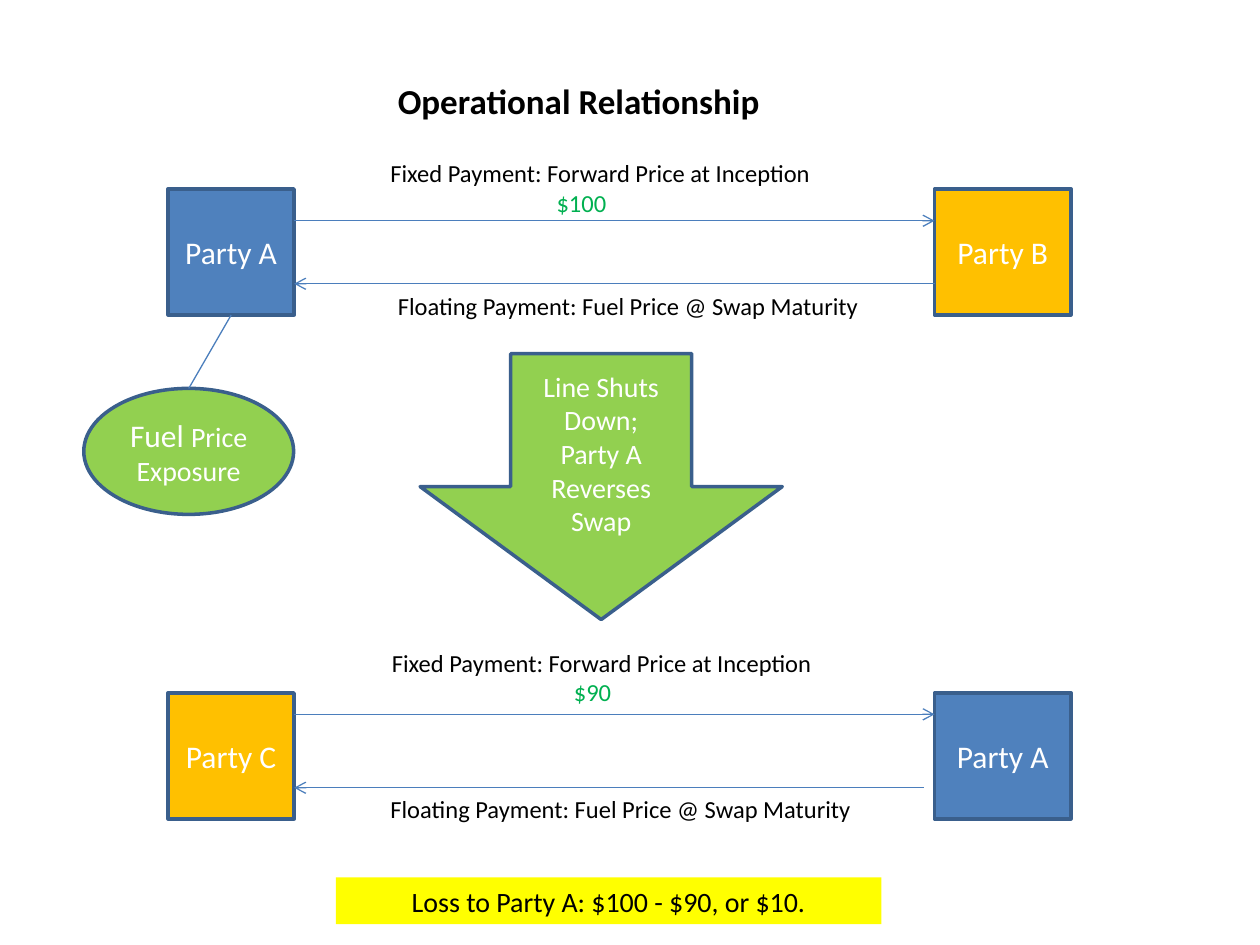
from lxml.etree import SubElement as Sub
from pptx import Presentation
from pptx.dml.color import RGBColor as RGB
from pptx.enum.shapes import MSO_CONNECTOR as Conn, MSO_SHAPE as Geo
from pptx.enum.text import MSO_ANCHOR as Anchor, PP_ALIGN as Align
from pptx.oxml.ns import qn
from pptx.util import Cm, Pt

BLUE, GOLD, LIME, EDGE = "4F81BD", "FFC000", "92D050", "3A5F8C"
WHITE, BLACK, GREEN = "FFFFFF", "000000", "00B050"


def color(fmt, code):
    if hasattr(fmt, "solid"):
        fmt.solid()
        fmt = fmt.fore_color
    fmt.rgb = RGB.from_string(code)


def write(frame, paras, align):
    """Each paragraph is a list of (text, size, color, bold) runs."""
    frame.word_wrap = True
    for i, runs in enumerate(paras):
        para = frame.paragraphs[0] if i == 0 else frame.add_paragraph()
        para.alignment = align
        for text, size, code, bold in runs:
            run = para.add_run()
            run.text = text
            look = {"name": "Calibri", "size": Pt(size), "bold": bold}
            for key, val in look.items():
                setattr(run.font, key, val)
            color(run.font.color, code)


deck = Presentation()
deck.slide_width, deck.slide_height = Cm(25.4), Cm(19.05)
slide = deck.slides.add_slide(deck.slide_layouts[6])
shapes = slide.shapes

# Filled shapes: parties, exposure, reversal and loss
boxes = {
    "A top": (Geo.RECTANGLE, 3.39, 3.81, 2.54, 2.54, BLUE,
              [[("Party A", 18, WHITE, False)]]),
    "B": (Geo.RECTANGLE, 18.84, 3.81, 2.75, 2.54, GOLD,
          [[("Party B", 18, WHITE, False)]]),
    "C": (Geo.RECTANGLE, 3.39, 13.97, 2.54, 2.54, GOLD,
          [[("Party C", 18, WHITE, False)]]),
    "A low": (Geo.RECTANGLE, 18.84, 13.97, 2.75, 2.54, BLUE,
              [[("Party A", 18, WHITE, False)]]),
    "fuel": (Geo.OVAL, 1.69, 7.83, 4.23, 2.54, LIME,
             [[("Fuel ", 18, WHITE, False),
               ("Price Exposure", 16, WHITE, False)]]),
    "swap": (Geo.DOWN_ARROW, 8.47, 7.13, 7.3, 5.36, LIME,
             [[("Line Shuts Down;", 16, WHITE, False)],
              [("Party A Reverses Swap", 16, WHITE, False)]]),
    "loss": (Geo.RECTANGLE, 6.77, 17.69, 11, 0.94, "FFFF00",
             [[("Loss to Party A: $100 - $90, or $10.", 16, BLACK, False)]]),
}
made = {}
for name, (geo, x, y, w, h, fill, paras) in boxes.items():
    box = shapes.add_shape(geo, Cm(x), Cm(y), Cm(w), Cm(h))
    box.shadow.inherit = False
    color(box.fill, fill)
    if name == "loss":
        box.line.fill.background()
    else:
        color(box.line.fill, EDGE)
        box.line.width = Pt(2)
    box.text_frame.vertical_anchor = Anchor.MIDDLE
    write(box.text_frame, paras, Align.CENTER)
    made[name] = box

# Payment arrows, then the link from Party A to its exposure
lines = [
    (5.93, 4.45, 18.84, 4.45, True),
    (18.84, 5.72, 5.93, 5.72, True),
    (5.93, 14.4, 18.84, 14.4, True),
    (18.62, 15.88, 5.93, 15.88, True),
    (4.66, 6.35, 3.81, 7.83, False),
]
for x1, y1, x2, y2, tip in lines:
    line = shapes.add_connector(Conn.STRAIGHT, Cm(x1), Cm(y1), Cm(x2), Cm(y2))
    color(line.line.fill, "4B7EBC")
    line.line.width = Pt(0.75)
    if tip:
        Sub(line.line._get_or_add_ln(), qn("a:tailEnd"), type="arrow")
    else:
        line.begin_connect(made["A top"], 2)
        line.end_connect(made["fuel"], 0)
    Sub(line._element.spPr, qn("a:effectLst"))

# Title and payment labels, with the price indented below
fixed = "Fixed Payment: Forward Price at Inception"
float_ = "Floating Payment: Fuel Price @ Swap Maturity"
labels = [
    (7.77, 1.47, 10.64, 1.12, "Operational Relationship", 20, None, 0),
    (7.62, 3.07, 10.8, 1.45, fixed, 14, "$100", 3.35),
    (7.77, 5.74, 13.69, 0.86, float_, 14, None, 0),
    (7.65, 12.93, 9.4, 1.45, fixed, 14, "$90", 3.67),
    (7.62, 15.88, 10.16, 0.86, float_, 14, None, 0),
]
for x, y, w, h, text, size, price, indent in labels:
    frame = shapes.add_textbox(Cm(x), Cm(y), Cm(w), Cm(h)).text_frame
    paras = [[(text, size, BLACK, size == 20)]]
    if price:
        paras.append([(price, size, GREEN, False)])
    write(frame, paras, Align.LEFT)
    if price:
        frame.paragraphs[1]._p.get_or_add_pPr().set("marL", str(Cm(indent)))

deck.save("out.pptx")
